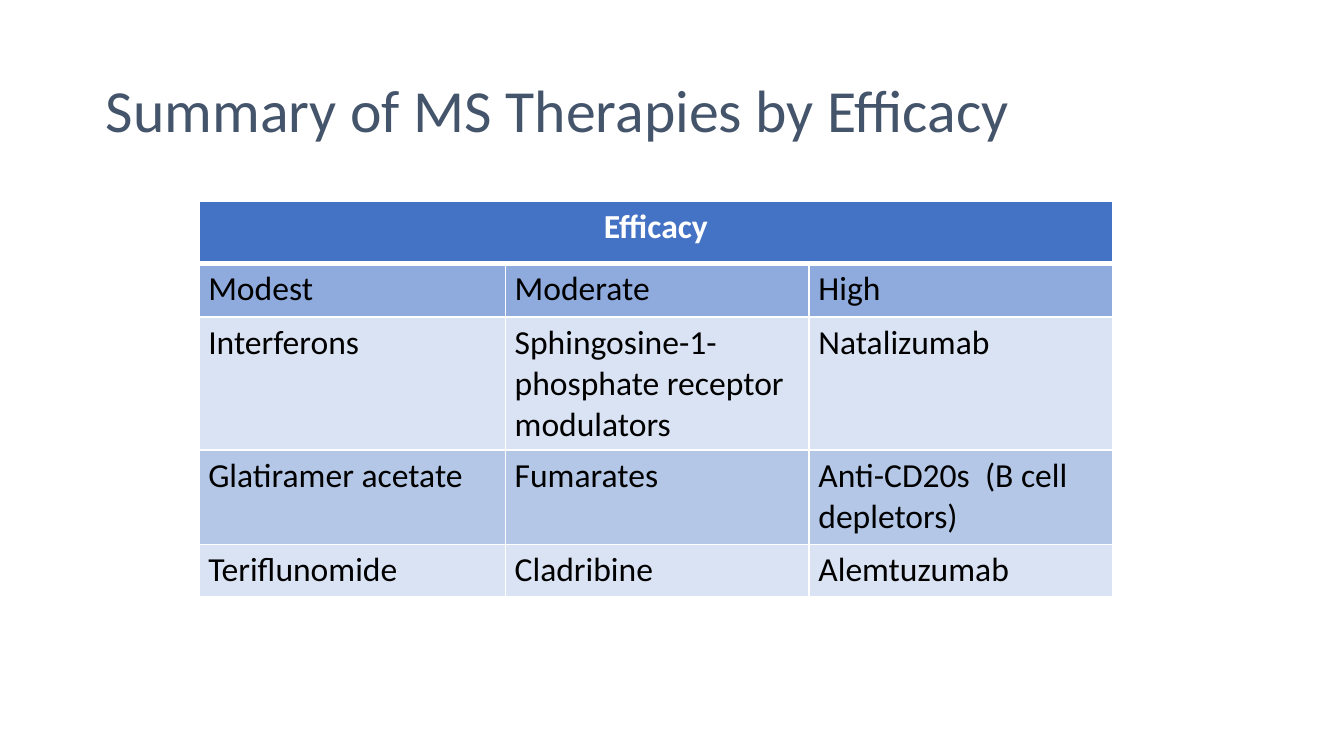
from lxml import etree
from pptx import Presentation
from pptx.dml.color import RGBColor
from pptx.enum.text import MSO_ANCHOR, PP_ALIGN
from pptx.oxml.ns import qn
from pptx.util import Inches, Pt

MIDDLE = MSO_ANCHOR.MIDDLE
CENTER = PP_ALIGN.CENTER
SLATE = RGBColor(0x44, 0x54, 0x6A)
WHITE = RGBColor(0xFF, 0xFF, 0xFF)
BLACK = RGBColor(0x00, 0x00, 0x00)
BLUE = RGBColor(0x44, 0x72, 0xC4)
MID_BLUE = RGBColor(0x8F, 0xAA, 0xDC)
PALE_BLUE = RGBColor(0xDA, 0xE3, 0xF3)
LIGHT_BLUE = RGBColor(0xB4, 0xC7, 0xE7)
FONT = "Calibri"


def style_text(paragraph, size, color, bold=False):
    for run in paragraph.runs:
        run.font.name = FONT
        run.font.size = Pt(size)
        run.font.bold = bold
        run.font.color.rgb = color


def add_border(cell, side, width):
    line = etree.SubElement(cell._tc.get_or_add_tcPr(), qn(f"a:ln{side}"), w=str(Pt(width)))
    fill = etree.SubElement(line, qn("a:solidFill"))
    etree.SubElement(fill, qn("a:srgbClr"), val=str(WHITE))


prs = Presentation()
prs.slide_width = Inches(10)
prs.slide_height = Inches(10 * 9 / 16)
slide = prs.slides.add_slide(prs.slide_layouts[6])

title = slide.shapes.add_textbox(Inches(0.69), Inches(0.3), Inches(8.62), Inches(1.09)).text_frame
title.word_wrap = True
title.vertical_anchor = MIDDLE
title.text = "Summary of MS Therapies by Efficacy"
title.paragraphs[0].line_spacing = 0.9
style_text(title.paragraphs[0], 32, SLATE)

rows = [
    (0.46, BLUE, ["Efficacy", "", ""]),
    (0.4, MID_BLUE, ["Modest", "Moderate", "High"]),
    (0.96, PALE_BLUE, ["Interferons", "Sphingosine-1-phosphate receptor modulators", "Natalizumab"]),
    (0.7, LIGHT_BLUE, ["Glatiramer acetate", "Fumarates", "Anti-CD20s  (B cell depletors)"]),
    (0.39, PALE_BLUE, ["Teriflunomide", "Cladribine", "Alemtuzumab"]),
]
therapies = slide.shapes.add_table(
    len(rows), 3, Inches(1.48), Inches(1.5), Inches(6.8), Inches(2.93)
).table
for column, width in zip(therapies.columns, (2.28, 2.26, 2.26)):
    column.width = Inches(width)

for r, (height, color, labels) in enumerate(rows):
    therapies.rows[r].height = Inches(height)
    for c, label in enumerate(labels):
        cell = therapies.cell(r, c)
        cell.margin_left = cell.margin_right = Inches(0.07)
        cell.margin_top = Inches(0.04)
        cell.margin_bottom = Inches(0.05)
        add_border(cell, "L", 1)
        add_border(cell, "R", 1)
        add_border(cell, "T", 3 if r == 1 else 1)
        add_border(cell, "B", 3 if r == 0 else 1)
        cell.fill.solid()
        cell.fill.fore_color.rgb = color
        if label:
            cell.text_frame.text = label
            style_text(cell.text_frame.paragraphs[0], 18, BLACK if r else WHITE, r == 0)

heading = therapies.cell(0, 0)
heading.merge(therapies.cell(0, 2))
heading.text_frame.paragraphs[0].alignment = CENTER

prs.save("out.pptx")
